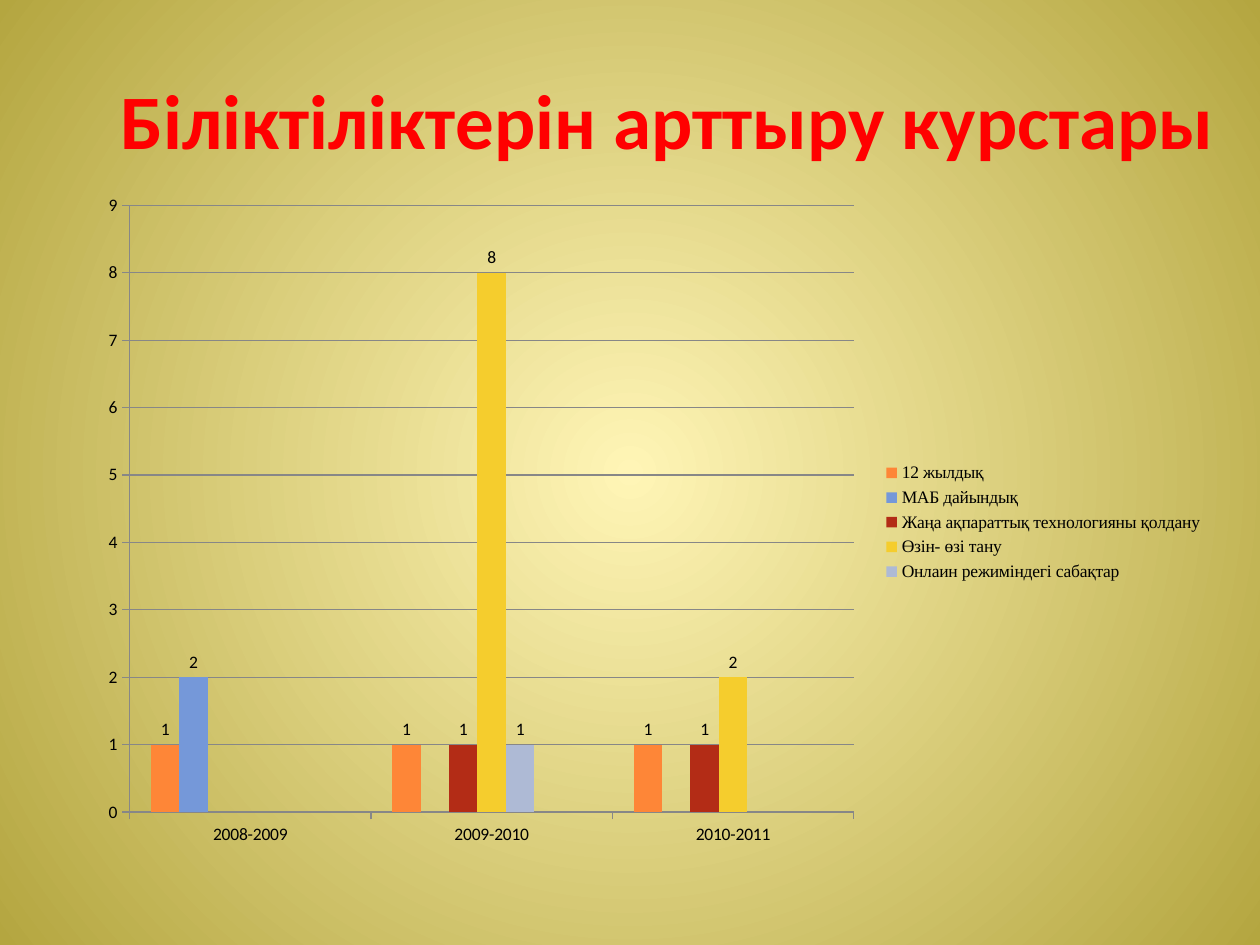
from pptx import Presentation
from pptx.chart import data
from pptx.dml.color import RGBColor
from pptx.enum import chart as ch, text
from pptx.oxml import parse_xml
from pptx.oxml import ns
from pptx.util import Inches, Pt

RED = RGBColor(0xFF, 0x00, 0x00)
BLACK = RGBColor(0x00, 0x00, 0x00)
GRAY = RGBColor(0x87, 0x87, 0x87)
CREAM = RGBColor(0xFF, 0xF5, 0xB6)
OLIVE = RGBColor(0xB4, 0xA6, 0x40)
ORANGE = RGBColor(0xFE, 0x86, 0x37)
BLUE = RGBColor(0x75, 0x98, 0xD9)
BRICK = RGBColor(0xB3, 0x2C, 0x16)
GOLD = RGBColor(0xF5, 0xCD, 0x2D)
MIST = RGBColor(0xAE, 0xBA, 0xD5)
SLATE = RGBColor(0x77, 0x7C, 0x84)

YEARS = ["2008-2009", "2009-2010", "2010-2011"]
COURSES = [
    ("12 жылдық", (1, 1, 1), ORANGE),
    ("МАБ дайындық", (2, None, None), BLUE),
    ("Жаңа ақпараттық технологияны қолдану", (None, 1, 1), BRICK),
    ("Өзін- өзі тану", (None, 8, 2), GOLD),
    ("Онлаин режиміндегі сабақтар", (None, 1, None), MIST),
    ("Series 6", (None, None, None), SLATE),
    ("Series 7", (None, None, None), ORANGE),
]


def set_font(font, name, size, color):
    font.name, font.size = name, Pt(size)
    font.color.rgb = color


def paint(slide):
    # Radial gradient, light in the middle
    fill = slide.background.fill
    fill.gradient()
    for stop, color, pos in zip(fill.gradient_stops, (CREAM, OLIVE), (0, 1)):
        stop.color.rgb = color
        stop.position = pos
    grad = slide.background._cSld.find(".//" + ns.qn("a:gradFill"))
    for line in grad.findall(ns.qn("a:lin")):
        grad.remove(line)
    grad.append(parse_xml(
        f'<a:path {ns.nsdecls("a")} path="circle">'
        '<a:fillToRect l="50000" t="50000" r="50000" b="50000"/></a:path>'))


def add_title(slide, box):
    title = slide.shapes.title
    title.left, title.top, title.width, title.height = box
    frame = title.text_frame
    frame.text = "Біліктіліктерін арттыру курстары"
    frame.word_wrap = False
    frame.auto_size = text.MSO_AUTO_SIZE.SHAPE_TO_FIT_TEXT
    para = frame.paragraphs[0]
    para.alignment = text.PP_ALIGN.CENTER
    set_font(para.font, "Calibri", 44, RED)
    para.font.bold = True


def place_plot(chart, x, y, w, h):
    # Inner plot area, as fractions of the chart
    sizes = "".join(f'<c:{k} val="{v}"/>' for k, v in zip("xywh", (x, y, w, h)))
    plot = chart._chartSpace.chart.plotArea
    for old in plot.findall(ns.qn("c:layout")):
        plot.remove(old)
    plot.insert(0, parse_xml(
        f'<c:layout {ns.nsdecls("c")}><c:manualLayout>'
        '<c:layoutTarget val="inner"/><c:xMode val="edge"/>'
        f'<c:yMode val="edge"/>{sizes}</c:manualLayout></c:layout>'))


def add_legend(chart, hidden):
    chart.has_legend = True
    legend = chart.legend
    legend.position = ch.XL_LEGEND_POSITION.RIGHT
    legend.include_in_layout = False
    set_font(legend.font, "Times New Roman", 10, BLACK)
    for at, idx in enumerate(hidden, 1):
        legend._element.insert(at, parse_xml(
            f'<c:legendEntry {ns.nsdecls("c")}><c:idx val="{idx}"/>'
            '<c:delete val="1"/></c:legendEntry>'))


def add_bars(slide, box):
    info = data.CategoryChartData()
    info.categories = YEARS
    for name, vals, _ in COURSES:
        info.add_series(name, vals)
    kind = ch.XL_CHART_TYPE.COLUMN_CLUSTERED
    chart = slide.shapes.add_chart(kind, *box, info).chart
    chart.has_title = False
    set_font(chart.font, "Calibri", 10, BLACK)

    # Columns; the empty courses have no labels
    plot = chart.plots[0]
    plot.vary_by_categories = False
    plot.gap_width, plot.overlap = 150, 0
    for bars, (_, vals, color) in zip(plot.series, COURSES):
        bars.format.fill.solid()
        bars.format.fill.fore_color.rgb = color
        if any(vals):
            bars.data_labels.show_value = True
            bars.data_labels.position = ch.XL_LABEL_POSITION.OUTSIDE_END

    # Axes and grid
    scale = chart.value_axis
    scale.minimum_scale, scale.maximum_scale, scale.major_unit = 0, 9, 1
    scale.has_major_gridlines = True
    for part in (scale, chart.category_axis, scale.major_gridlines):
        part.format.line.color.rgb = GRAY
        part.format.line.width = Pt(0.75)
    for axis in (scale, chart.category_axis):
        axis.major_tick_mark = ch.XL_TICK_MARK.OUTSIDE

    place_plot(chart, 0.04, 0.03, 0.64, 0.9)
    add_legend(chart, [5, 6])


def main():
    prs = Presentation()
    prs.slide_width, prs.slide_height = Inches(10), Inches(7.5)
    slide = prs.slides.add_slide(prs.slide_layouts[5])
    paint(slide)
    add_title(slide, [Inches(n) for n in (0.82, 0.52, 8.97, 0.84)])
    add_bars(slide, [Inches(n) for n in (0.67, 1.47, 8.98, 5.35)])
    prs.save("out.pptx")


if __name__ == "__main__":
    main()
